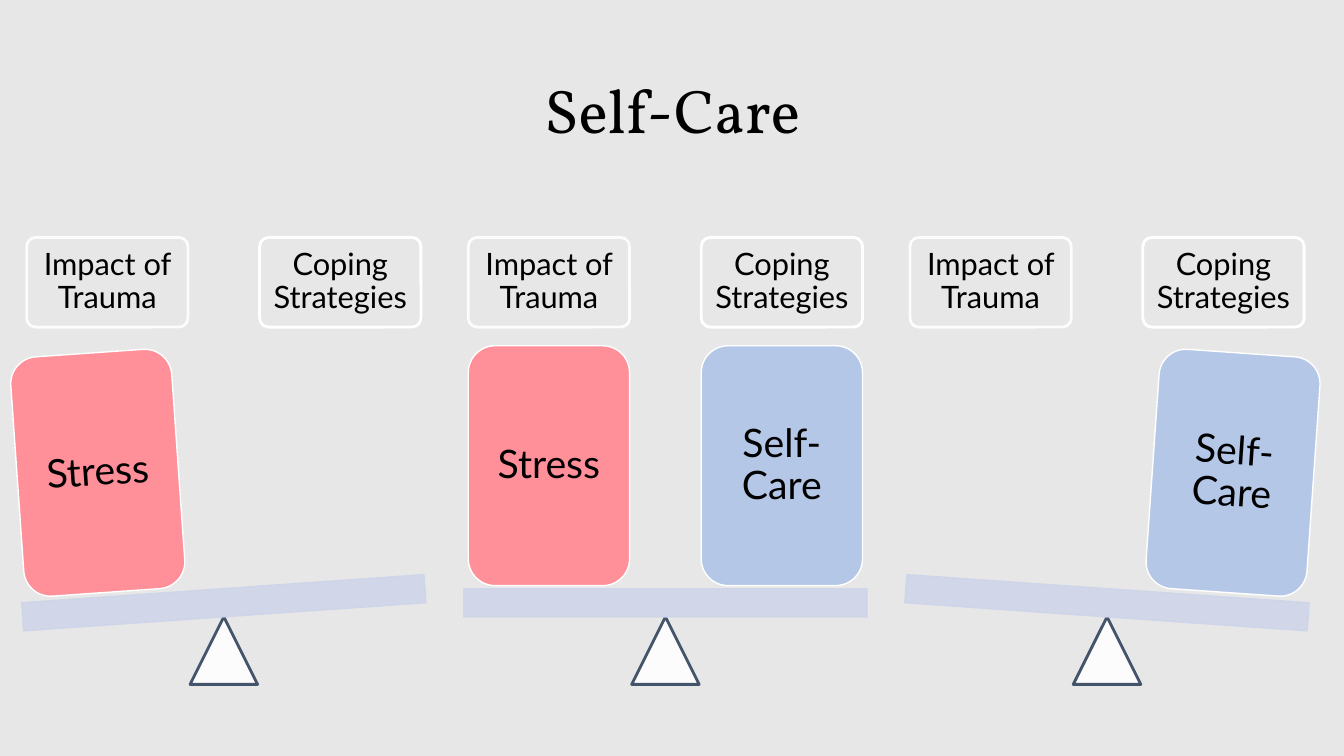
from lxml.etree import SubElement
from pptx import Presentation
from pptx.dml.color import RGBColor
from pptx.enum.shapes import MSO_SHAPE
from pptx.enum.text import MSO_ANCHOR, PP_ALIGN
from pptx.oxml.ns import qn
from pptx.util import Inches, Pt

# Content: each seesaw has a tilt in degrees and its loads by side (-1 left, 1 right)
TITLE = "Self-Care"
LABELS = {-1: "Impact of Trauma", 1: "Coping Strategies"}
LOADS = {-1: ("Stress", "stress"), 1: ("Self-Care", "care")}
SEESAWS = [(-4, [-1]), (0, [-1, 1]), (4, [1])]

COLORS = {
    "background": "E7E7E7", "text": "000000", "white": "FFFFFF",
    "fulcrum": "44546A", "plank": "CFD5EA", "stress": "FF8F98", "care": "B4C7E7",
}

# Layout in inches
FIRST_CENTER, PITCH = 2.22, 4.38
ARM = 1.155
LABEL_Y, LOAD_Y, PLANK_Y, FULCRUM_Y = 2.8, 4.62, 5.98, 6.455
TILT_SHIFT = (0.095, 0.07)
LABEL_SIZE, LOAD_SIZE = (1.6, 0.89), (1.6, 2.38)
PLANK_SIZE, FULCRUM_SIZE = (4, 0.28), (0.67, 0.67)


def rgb(name):
    return RGBColor.from_string(COLORS[name])


def set_alpha(fill, percent):
    color = fill._xPr.find(qn("a:solidFill"))[0]
    SubElement(color, qn("a:alpha")).set("val", str(percent * 1000))


def write(shape, text, size, font, inset=0.1):
    frame = shape.text_frame
    frame_format = {"word_wrap": True, "vertical_anchor": MSO_ANCHOR.MIDDLE}
    frame_format |= {f"margin_{side}": Inches(inset) for side in ("left", "right", "top", "bottom")}
    for name, value in frame_format.items():
        setattr(frame, name, value)
    paragraph = frame.paragraphs[0]
    paragraph.alignment, paragraph.line_spacing = PP_ALIGN.CENTER, 0.9
    run = paragraph.add_run()
    for name, value in {"size": Pt(size), "name": font}.items():
        setattr(run.font, name, value)
    run.text = text
    run.font.color.rgb = rgb("text")


def add_part(kind, center, middle, size, line, width, fill=None,
             fill_alpha=100, line_alpha=100, tilt=0):
    w, h = size
    part = slide.shapes.add_shape(kind, Inches(center - w / 2), Inches(middle - h / 2),
                                  Inches(w), Inches(h))
    part.shadow.inherit = False
    part.rotation = tilt
    if fill:
        part.fill.solid()
        part.fill.fore_color.rgb = rgb(fill)
        if fill_alpha < 100:
            set_alpha(part.fill, fill_alpha)
    else:
        part.fill.background()
    part.line.color.rgb = rgb(line)
    part.line.width = Pt(width)
    if line_alpha < 100:
        set_alpha(part.line.fill, line_alpha)
    return part


prs = Presentation()
prs.slide_width, prs.slide_height = Inches(13.33), Inches(7.5)
slide = prs.slides.add_slide(prs.slide_layouts[6])
slide.background.fill.solid()
slide.background.fill.fore_color.rgb = rgb("background")

for index, (tilt, loaded_sides) in enumerate(SEESAWS):
    center = FIRST_CENTER + index * PITCH

    # Labels above both arms
    for side, text in LABELS.items():
        label = add_part(MSO_SHAPE.ROUNDED_RECTANGLE, center + side * ARM, LABEL_Y,
                         LABEL_SIZE, "white", 2, line_alpha=90 if side < 0 else 100)
        label.adjustments[0] = 0.1
        write(label, text, 22, "Lato", 0.09)

    # Fulcrum and plank
    add_part(MSO_SHAPE.ISOSCELES_TRIANGLE, center, FULCRUM_Y, FULCRUM_SIZE,
             "fulcrum", 2, "white", fill_alpha=90)
    add_part(MSO_SHAPE.RECTANGLE, center, PLANK_Y, PLANK_SIZE, "plank", 1, "plank",
             fill_alpha=90, line_alpha=90, tilt=tilt)

    # Loads, moved outwards and down when the plank tilts
    shift_x, shift_y = TILT_SHIFT if tilt else (0, 0)
    for side in loaded_sides:
        text, fill = LOADS[side]
        load = add_part(MSO_SHAPE.ROUNDED_RECTANGLE, center + side * (ARM + shift_x),
                        LOAD_Y + shift_y, LOAD_SIZE, "white", 1, fill, tilt=tilt)
        write(load, text, 28, "Lato", 0.12)

# Title
title = slide.shapes.add_textbox(Inches(0.92), Inches(0.4), Inches(11.5), Inches(1.45))
write(title, TITLE, 44, "Vollkorn")

prs.save("out.pptx")
